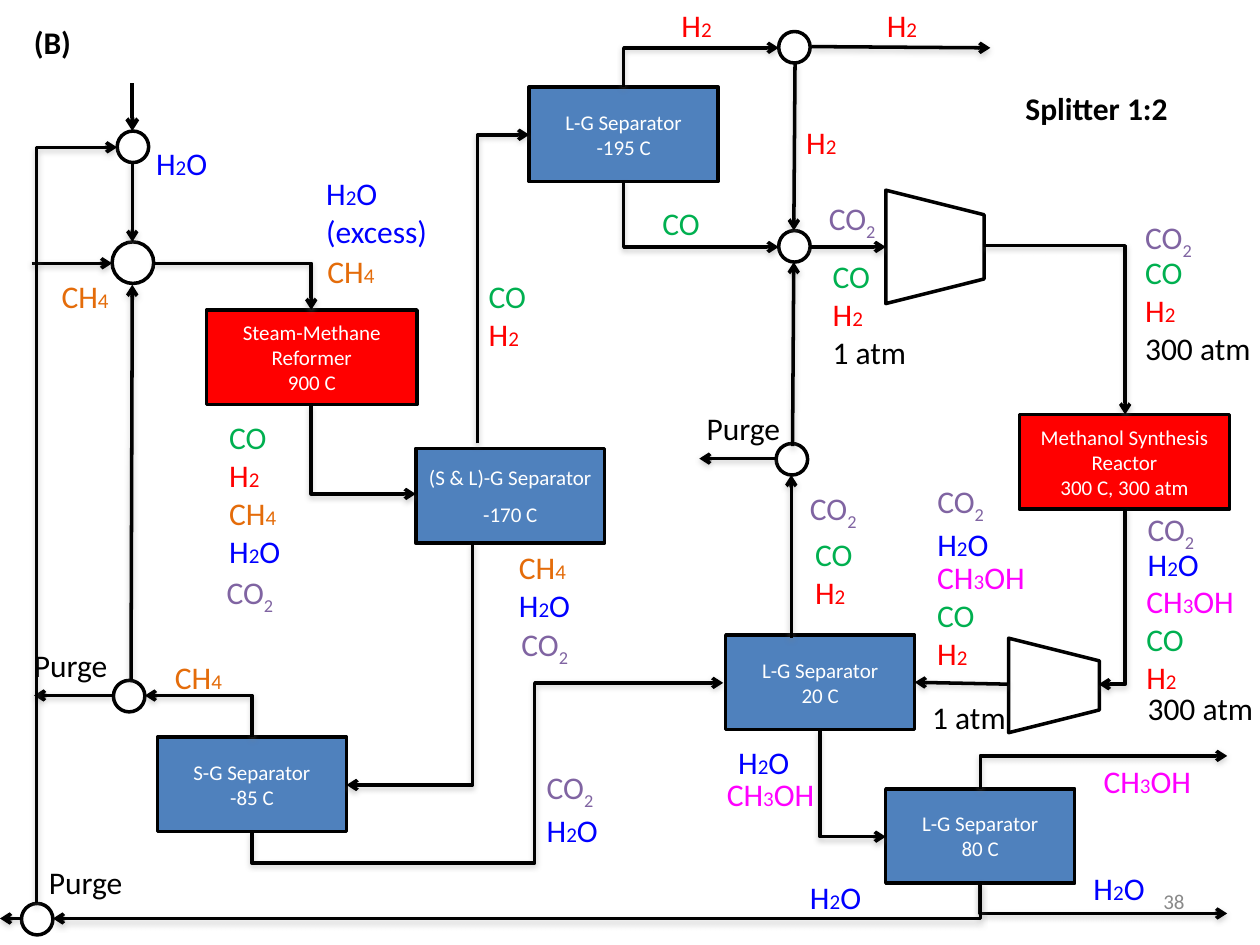
from itertools import groupby

from pptx import Presentation
from pptx.dml.color import RGBColor
from pptx.enum.shapes import MSO_CONNECTOR, MSO_SHAPE
from pptx.enum.text import MSO_ANCHOR, PP_ALIGN
from pptx.oxml import parse_xml
from pptx.oxml.ns import nsdecls
from pptx.util import Inches, Pt

STRAIGHT, ELBOW = MSO_CONNECTOR.STRAIGHT, MSO_CONNECTOR.ELBOW
RECT, OVAL, TRAPEZOID = MSO_SHAPE.RECTANGLE, MSO_SHAPE.OVAL, MSO_SHAPE.TRAPEZOID
MIDDLE = MSO_ANCHOR.MIDDLE
LEFT, CENTER, RIGHT = PP_ALIGN.LEFT, PP_ALIGN.CENTER, PP_ALIGN.RIGHT
COLORS = {
    "black": "000000", "white": "FFFFFF", "blue": "4F81BD", "red": "FF0000", "grey": "898989",
    "H2O": "0000FF", "H2O (excess)": "0000FF", "CH4": "E46C0A", "CO": "00B050",
    "H2": "FF0000", "CO2": "8064A2", "CH3OH": "FF00FF",
}

prs = Presentation()
prs.slide_width, prs.slide_height = Inches(10), Inches(7.5)
U = prs.slide_width // 100
s = prs.slides.add_slide(prs.slide_layouts[6])


def add_block(kind, x, y, w, h, fill):
    sp = s.shapes.add_shape(kind, *(round(v * U) for v in (x, y, w, h)))
    sp.shadow.inherit = False
    sp.fill.solid()
    sp.fill.fore_color.rgb = RGBColor.from_string(COLORS[fill])
    sp.line.color.rgb = RGBColor.from_string(COLORS["black"])
    sp.line.width = Pt(2)
    return sp


def add_arrow(kind, x1, y1, x2, y2, weight=2, shadow=True):
    c = s.shapes.add_connector(kind, *(round(v * U) for v in (x1, y1, x2, y2)))
    c.line.color.rgb = RGBColor.from_string(COLORS["black"])
    c.line.width = Pt(weight)
    spPr = c._element.spPr
    spPr.get_or_add_ln().append(parse_xml(f'<a:tailEnd {nsdecls("a")} type="arrow"/>'))
    blur = ('<a:outerShdw blurRad="40000" dist="20000" dir="5400000" rotWithShape="0">'
            '<a:srgbClr val="808080"><a:alpha val="38000"/></a:srgbClr></a:outerShdw>')
    spPr.append(parse_xml(f'<a:effectLst {nsdecls("a")}>{blur if shadow else ""}</a:effectLst>'))
    return c


units = {}
for x, y, w, fill, lines, gap in [
    (16.4, 24.6, 16.7, "red", ["Steam-Methane Reformer", "900 C"], 0),
    (80.9, 32.9, 16.7, "red", ["Methanol Synthesis Reactor", "300 C, 300 atm"], 0),
    (57.6, 50.4, 15, "blue", ["L-G Separator", "20 C"], 0),
    (33, 35.6, 15, "blue", ["(S & L)-G Separator", "-170 C"], 7),
    (42, 6.9, 15, "blue", ["L-G Separator", "-195 C"], 0),
    (12.5, 58.5, 15, "blue", ["S-G Separator", "-85 C"], 0),
    (70.3, 62.6, 15, "blue", ["L-G Separator", "80 C"], 0),
]:
    sp = add_block(RECT, x, y, w, 7.5, fill)
    units[lines[-1]] = sp
    tf = sp.text_frame
    tf.word_wrap = True
    tf.vertical_anchor = MIDDLE
    tf.margin_left = tf.margin_right = Inches(0.05)
    tf.text = "\n".join(lines)
    tf.paragraphs[1].space_before = Pt(gap)
    for p in tf.paragraphs:
        p.alignment = CENTER
        p.font.size = Pt(12)
        p.font.name = "Calibri"
        p.font.color.rgb = RGBColor.from_string(COLORS["white"])

for x, y, w, h in [(69.7, 15.7, 9, 7.8), (79.9, 50.8, 7.5, 7.2)]:
    add_block(TRAPEZOID, x, y, w, h, "white").rotation = 90

for x, y, d in [
    (8.9, 19.2, 3.3), (9.3, 10.4, 2.5), (9, 54, 2.5), (1.7, 71.7, 2.5),
    (61.8, 2.5, 2.5), (61.8, 18.3, 2.5), (61.6, 35.2, 2.5),
]:
    add_block(OVAL, x, y, d, d, "white")

for ends in [
    (10.5, 11.7 + 1.2, 10.5, 19.2), (2.5, 20.9, 8.9, 20.9), (62.9, 35.4, 63, 20.8),
    (62.8, 50.6, 62.8, 37.7), (61.6, 36.4, 55.5, 36.4), (10.4, 54, 10.5, 22.6),
    (9, 55.2, 2.7, 55.2), (64.2, 19.6, 70.3, 19.6), (64.4, 3.7, 78.6, 3.8),
    (63.1, 5, 63, 18.3), (1.7, 72.9, 0, 72.9),
]:
    add_arrow(STRAIGHT, *ends)
add_arrow(STRAIGHT, 10.5, 6.6, 10.5, 10.4, weight=2.25, shadow=False)
add_arrow(STRAIGHT, 80, 54.3, 72.6, 54.2).end_connect(units["20 C"], 3)

for x1, y1, x2, y2, first, bends in [
    (12.2, 20.9, 24.7, 24.6, "across", None),
    (78.1, 19.5, 89.3, 32.9, "across", None),
    (24.7, 32.1, 33, 39.2, "down", None),
    (89.3, 40.4, 87.2, 54.3, "down", None),
    (37.9, 35.2, 42, 10.7, "down", None),
    (49.5, 6.9, 61.8, 3.8, "down", None),
    (49.5, 14.4, 61.8, 19.6, "down", None),
    (37.5, 43.1, 27.5, 62.3, "down", None),
    (20, 58.5, 11.5, 55.2, "down", None),
    (20, 66, 57.4, 54.2, "down", (-21100, 60000)),
    (65.1, 57.9, 70.3, 66.4, "down", None),
    (77.8, 62.6, 97.4, 60, "down", None),
    (77.8, 70.1, 97.4, 72.5, "down", None),
    (77.8, 70.1, 4.2, 72.9, "down", None),
    (2.9, 71.7, 9.3, 11.7, "down", None),
]:
    c = add_arrow(ELBOW, x1, y1, x2, y2)
    flip_h, flip_v = x2 < x1, y2 < y1
    xfrm = c._element.spPr.find("{*}xfrm")
    if first == "down":
        flip_h, flip_v = y2 < y1, x2 > x1
        w, h = c.width, c.height
        c.left, c.top = c.left + (w - h) // 2, c.top + (h - w) // 2
        c.width, c.height = h, w
        xfrm.set("rot", "5400000")
    xfrm.set("flipH", str(int(flip_h)))
    xfrm.set("flipV", str(int(flip_v)))
    geom = c._element.spPr.find("{*}prstGeom")
    geom.set("prst", "bentConnector4" if bends else "bentConnector2")
    if bends:
        guides = "".join(f'<a:gd name="adj{i}" fmla="val {v}"/>' for i, v in enumerate(bends, 1))
        geom.remove(geom.find("{*}avLst"))
        geom.append(parse_xml(f'<a:avLst {nsdecls("a")}>{guides}</a:avLst>'))

for x, y, w, lines in [
    (11.4, 10.9, 8.3, ["H2O"]), (3.9, 21.5, 8.3, ["CH4"]),
    (24.9, 13.3, 10.2, ["H2O (excess)"]), (25, 19.5, 7.9, ["CH4"]),
    (17.2, 32.7, 7.5, ["CO", "H2", "CH4", "H2O"]), (17, 45, 7.5, ["CO2"]),
    (65.1, 19.9, 9.2, ["CO", "H2", "1 atm"]), (64.8, 15.3, 7.5, ["CO2"]),
    (89.9, 19.6, 11, ["CO", "H2", "300 atm"]), (89.9, 16.8, 7.5, ["CO2"]),
    (90.1, 40, 7.5, ["CO2"]), (90.1, 42.8, 7.5, ["H2O"]),
    (90, 45.7, 10, ["CH3OH", "CO", "H2"]), (90.1, 54.2, 11.3, ["300 atm"]),
    (73.4, 37.8, 7.5, ["CO2", "H2O"]), (73.4, 43.8, 10, ["CH3OH", "CO", "H2"]),
    (73, 54.9, 11.3, ["1 atm"]),
    (63.3, 38.3, 7.5, ["CO2"]), (63.7, 42, 5.8, ["CO", "H2"]),
    (57.6, 58.5, 7.5, ["H2O"]), (56.7, 61, 10.8, ["CH3OH"]),
    (51.6, 15.7, 6, ["CO"]), (37.8, 21.5, 9.2, ["CO", "H2"]),
    (53.1, 0, 5, ["H2"]), (69.4, 0, 5, ["H2"]), (63, 9.3, 5, ["H2"]),
    (12.9, 51.7, 8.3, ["CH4"]), (40.2, 43, 7.5, ["CH4", "H2O"]), (40.4, 49.1, 7.5, ["CO2"]),
    (42.4, 60.5, 7.5, ["CO2", "H2O"]), (86.6, 60, 10.8, ["CH3OH"]),
    (85.8, 68.5, 7.5, ["H2O"]), (63.3, 69.2, 7.5, ["H2O"]),
    (55.1, 32, 11.3, ["Purge"]), (1.7, 50.8, 11.3, ["Purge"]), (2.9, 68, 11.3, ["Purge"]),
    (80.4, 6.6, 17.2, ["Splitter 1:2"]), (1.7, 1.3, 5.8, ["(B)"]), (71.7, 69.5, 23.3, ["38"]),
]:
    box = [round(v * U) for v in (x, y, w, 1 + 3 * len(lines))]
    tf = s.shapes.add_textbox(*box).text_frame
    tf.word_wrap = True
    for i, line in enumerate(lines):
        p = tf.add_paragraph() if i else tf.paragraphs[0]
        p.alignment = RIGHT if line == "38" else LEFT
        parts = [line]
        if line in COLORS:
            parts = ["".join(g) for _, g in groupby(line, str.isdigit)]
        for part in parts:
            r = p.add_run()
            r.text = part
            r.font.name = "Calibri"
            r.font.size = Pt(12 if part.isdigit() and line != "CO2" else 18)
            r.font.bold = line in ("(B)", "Splitter 1:2")
            color = "grey" if line == "38" else line if line in COLORS else "black"
            r.font.color.rgb = RGBColor.from_string(COLORS[color])
            if line == "CO2" and part == "2":
                r.font._element.set("baseline", "-25000")
    if lines == ["38"]:
        tf.vertical_anchor = MIDDLE

prs.save("out.pptx")
